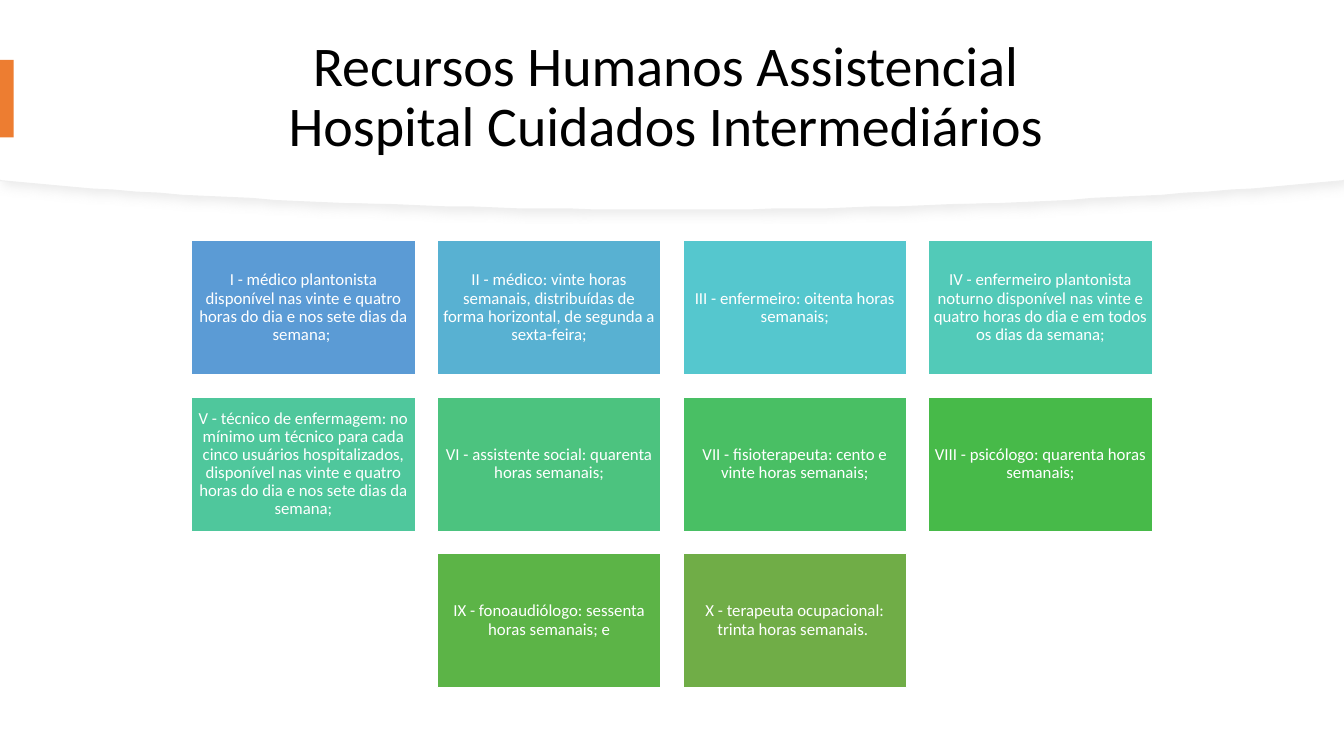
from lxml import etree
from pptx import Presentation
from pptx import util as u
from pptx.dml.color import RGBColor
from pptx.enum import shapes, text
from pptx.oxml import ns

WIDTH, HEIGHT = 1280, 720
COLUMNS, TILE_W, TILE_H, GAP, GRID_TOP = 4, 213, 128, 21, 229
STAFF = [
    ("I - médico plantonista disponível nas vinte e quatro horas do dia e nos sete dias da semana; ", "5B9BD5"),
    ("II - médico: vinte horas semanais, distribuídas de forma horizontal, de segunda a sexta-feira;", "58B1D2"),
    ("III - enfermeiro: oitenta horas semanais;", "55C7CE"),
    ("IV - enfermeiro plantonista noturno disponível nas vinte e quatro horas do dia "
     "e em todos os dias da semana;", "52CAB8"),
    ("V - técnico de enfermagem: no mínimo um técnico para cada cinco usuários hospitalizados, "
     "disponível nas vinte e quatro horas do dia e nos sete dias da semana;", "4FC79C"),
    ("VI - assistente social: quarenta horas semanais;", "4CC37F"),
    ("VII - fisioterapeuta: cento e vinte horas semanais;", "49BF64"),
    ("VIII - psicólogo: quarenta horas semanais;", "47BA49"),
    ("IX - fonoaudiólogo: sessenta horas semanais; e", "5CB447"),
    ("X - terapeuta ocupacional: trinta horas semanais. ", "70AD47"),
]


def px(length):
    return u.Emu(round(length * 9525))


def rgb(value):
    return RGBColor.from_string(value)


def bezier(start, pull_start, pull_end, end, steps=24):
    points = []
    for step in range(steps + 1):
        t = step / steps
        weights = ((1 - t) ** 3, 3 * t * (1 - t) ** 2, 3 * t * t * (1 - t), t ** 3)
        corners = zip(start, pull_start, pull_end, end)
        points.append(tuple(sum(w * c for w, c in zip(weights, axis)) for axis in corners))
    return points


class StaffSlide:
    """Draws the parts of one slide in a shared style."""

    font = "Calibri"

    def __init__(self, slide):
        self.slide = slide

    def set_words(self, frame, words, size, color):
        frame.text = words
        frame.word_wrap = True
        frame.auto_size = text.MSO_AUTO_SIZE.NONE
        frame.vertical_anchor = text.MSO_ANCHOR.MIDDLE
        for paragraph in frame.paragraphs:
            paragraph.alignment = text.PP_ALIGN.CENTER
            paragraph.line_spacing = 0.9
            for run in paragraph.runs:
                run.font.name = self.font
                run.font.size = u.Pt(size)
                run.font.color.rgb = rgb(color)

    def title(self, words, left, top, width, height):
        heading = self.slide.shapes.title
        heading.left, heading.top, heading.width, heading.height = map(px, (left, top, width, height))
        self.set_words(heading.text_frame, words, 40, "000000")
        self.slide.shapes._spTree.append(heading._element)

    def box(self, left, top, width, height, fill):
        box = self.slide.shapes.add_shape(
            shapes.MSO_SHAPE.RECTANGLE, *map(px, (left, top, width, height)))
        box.shadow.inherit = False
        box.fill.solid()
        box.fill.fore_color.rgb = rgb(fill)
        box.line.fill.background()
        return box

    def tile(self, words, left, top, fill):
        tile = self.box(left, top, TILE_W, TILE_H, fill)
        tile.line.color.rgb = rgb("FFFFFF")
        tile.line.width = u.Pt(1)
        frame = tile.text_frame
        frame.margin_left = frame.margin_right = frame.margin_top = frame.margin_bottom = px(4)
        self.set_words(frame, words, 12, "FFFFFF")

    def banner(self, depth):
        middle = WIDTH / 2
        left_half = bezier((87, depth - 20), (257, depth - 8), (444, depth), (middle, depth))
        left_half.insert(0, (0, depth - 28))
        right_half = [(WIDTH - x, y) for x, y in reversed(left_half[:-1])]
        builder = self.slide.shapes.build_freeform(0, 0, scale=9525)
        outline = left_half + right_half + [(WIDTH, 0)]
        builder.add_line_segments(outline, close=True)
        banner = builder.convert_to_shape()
        banner.shadow.inherit = False
        banner.fill.solid()
        banner.fill.fore_color.rgb = rgb("FFFFFF")
        banner.line.fill.background()
        return banner

    def edged_banner(self, depth):
        banner = self.banner(depth)
        banner.line.color.rgb = rgb("EFEFEF")
        banner.line.width = u.Pt(0.75)
        effects = banner._element.spPr.find(ns.qn("a:effectLst"))
        shadow = etree.SubElement(
            effects, ns.qn("a:outerShdw"), blurRad=str(u.Pt(7)), dist=str(u.Pt(3)),
            dir=str(45 * 60000), algn="tl", rotWithShape="0")
        tint = etree.SubElement(shadow, ns.qn("a:srgbClr"), val="D9D9D9")
        etree.SubElement(tint, ns.qn("a:alpha"), val="50000")


def main():
    deck = Presentation()
    deck.slide_width, deck.slide_height = px(WIDTH), px(HEIGHT)
    page = StaffSlide(deck.slides.add_slide(deck.slide_layouts[5]))
    page.edged_banner(200)
    page.banner(199)
    page.title("Recursos Humanos Assistencial \vHospital Cuidados Intermediários ", 88, 27, 1104, 133)
    page.box(0, 57, 13, 74, "ED7D31")
    for first in range(0, len(STAFF), COLUMNS):
        row = STAFF[first:first + COLUMNS]
        row_left = (WIDTH - len(row) * (TILE_W + GAP) + GAP) / 2
        top = GRID_TOP + first // COLUMNS * (TILE_H + GAP)
        for column, (role, fill) in enumerate(row):
            page.tile(role, row_left + column * (TILE_W + GAP), top, fill)
    deck.save("out.pptx")


if __name__ == "__main__":
    main()
